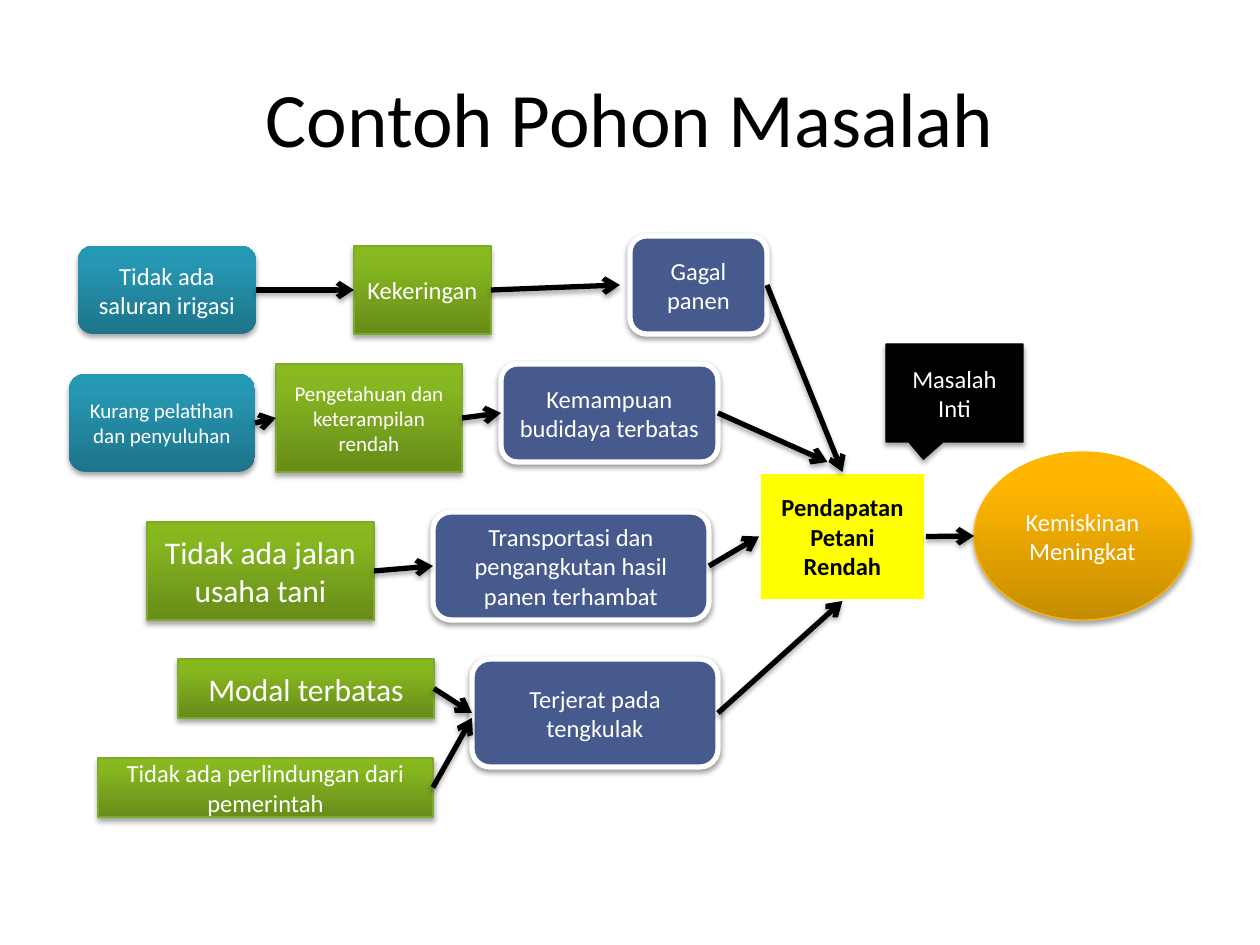
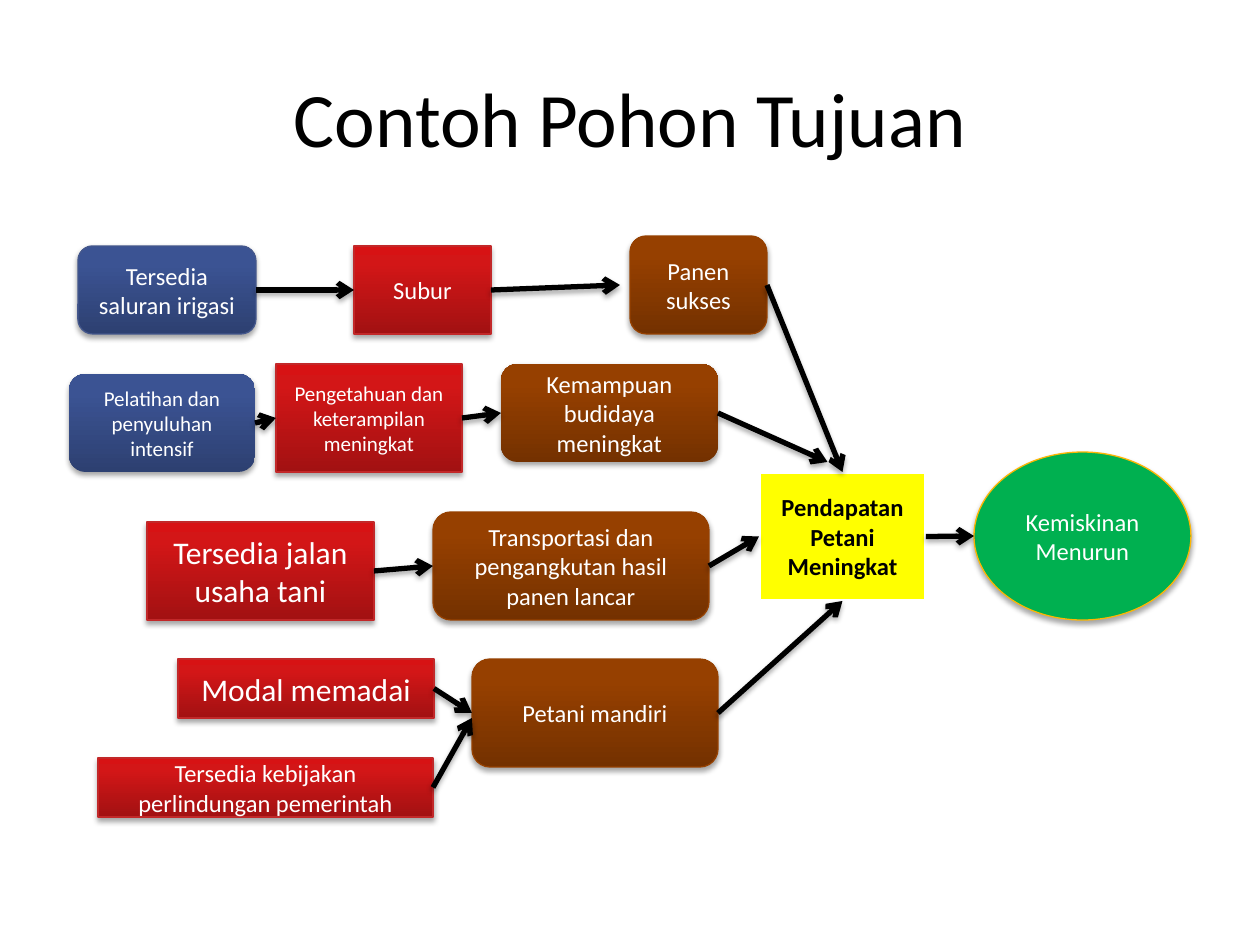
"""Build the problem tree and the objective tree as two slides."""
from copy import deepcopy

from lxml.etree import SubElement
from pptx import Presentation
from pptx.dml.color import RGBColor as Rgb
from pptx.enum.shapes import MSO_CONNECTOR as Line, MSO_SHAPE as Shape
from pptx.enum.text import MSO_ANCHOR as Anchor, PP_ALIGN as Align
from pptx.oxml.ns import qn
from pptx.util import Pt

SCALE = 914400 / 126
SLIDE_SIZE = (1260, 945)
TITLE_AREA = (63, 38, 1134, 157)

THEME = {
    "font": "Calibri", "ink": "000000", "paper": "FFFFFF",
    "title": 44, "large": 18, "body": 14, "small": 12,
    "arrow": 3, "soft": (35, 3.1, 1.8), "raised": (38, 3.1, 1.6),
    "teal": ("1D7489", "2696B2", "2499B5"),
    "green": ("678C19", "86B620", "88BA1D"),
    "amber": ("C58C00", "FFB601", "FFB602"),
    "blue": ("2D4071", "3B5393", "395295"),
    "red": ("A21112", "D31617", "D71214"),
    "brown": ("743100", "964000", "974100"),
    "slate": ("475A8D",), "yellow": ("FFFF00",),
    "emerald": ("00B050",), "black": ("000000",),
}

# role, area, text size
NODES = {
    "poverty": ("outcome", (974, 452, 217, 168), "body"),
    "income": ("core", (759, 472, 167, 129), "body"),
    "harvest": ("effect", (630, 236, 137, 98), "body"),
    "skill": ("effect", (501, 364, 217, 98), "body"),
    "transport": ("effect", (433, 512, 276, 108), "body"),
    "finance": ("effect", (472, 659, 246, 108), "body"),
    "water": ("cause", (354, 246, 137, 88), "body"),
    "irrigation": ("root", (78, 246, 178, 88), "body"),
    "knowledge": ("cause", (276, 364, 186, 108), "small"),
    "training": ("root", (69, 374, 186, 98), "small"),
    "road": ("cause", (147, 522, 227, 98), "large"),
    "capital": ("cause", (178, 659, 256, 59), "large"),
    "protection": ("cause", (98, 758, 335, 59), "body"),
    "label": ("label", (886, 344, 137, 98), "body"),
}

ROLE_SHAPES = {
    "outcome": Shape.OVAL, "core": Shape.RECTANGLE, "cause": Shape.RECTANGLE,
    "effect": Shape.ROUNDED_RECTANGLE, "root": Shape.ROUNDED_RECTANGLE,
    "label": Shape.RECTANGULAR_CALLOUT,
}
LABEL_POINTER = (-0.227, 0.676)

# source, target, side entered, shift of the arrow tip
LINKS = [
    ("income", "poverty", "left", (0, 0)),
    ("harvest", "income", "top", (0, 0)),
    ("skill", "income", "top", (-15, -10)),
    ("transport", "income", "left", (0, 0)),
    ("finance", "income", "bottom", (0, 0)),
    ("water", "harvest", "left", (-10, 0)),
    ("irrigation", "water", "left", (0, 0)),
    ("training", "knowledge", "left", (0, 0)),
    ("knowledge", "skill", "left", (0, 0)),
    ("road", "transport", "left", (0, 0)),
    ("capital", "finance", "left", (0, 0)),
    ("protection", "finance", "left", (0, 5)),
]

# styles: fill, line colour, line width, shadow
COMMON_STYLES = {
    "core": ("yellow", "FFFFFF", 2, None),
    "label": ("black", "000000", 0.75, "soft"),
}
TREES = [
    {
        "title": "Contoh Pohon Masalah",
        "styles": {
            "outcome": ("amber", "FEB604", 0.75, "soft"),
            "effect": ("slate", "FFFFFF", 3, "raised"),
            "cause": ("green", "82A92F", 0.75, "soft"),
            "root": ("teal", None, 0, "soft"),
        },
        "unlined": (),
        "texts": {
            "poverty": "Kemiskinan Meningkat",
            "income": "Pendapatan Petani Rendah",
            "harvest": "Gagal panen",
            "skill": "Kemampuan budidaya terbatas",
            "transport": "Transportasi dan pengangkutan hasil panen terhambat",
            "finance": "Terjerat pada tengkulak",
            "water": "Kekeringan",
            "irrigation": "Tidak ada saluran irigasi",
            "knowledge": "Pengetahuan dan keterampilan rendah",
            "training": "Kurang pelatihan dan penyuluhan",
            "road": "Tidak ada jalan usaha tani",
            "capital": "Modal terbatas",
            "protection": "Tidak ada perlindungan dari pemerintah",
            "label": "Masalah Inti",
        },
    },
    {
        "title": "Contoh Pohon Tujuan",
        "styles": {
            "outcome": ("emerald", "FEB604", 0.75, "soft"),
            "effect": ("brown", "964101", 0.75, "soft"),
            "cause": ("red", "C22829", 0.75, "soft"),
            "root": ("blue", "44578C", 0.75, "soft"),
        },
        "unlined": ("skill", "training"),
        "texts": {
            "poverty": "Kemiskinan Menurun",
            "income": "Pendapatan Petani Meningkat",
            "harvest": "Panen sukses",
            "skill": "Kemampuan budidaya meningkat",
            "transport": "Transportasi dan pengangkutan hasil panen lancar",
            "finance": "Petani mandiri",
            "water": "Subur",
            "irrigation": "Tersedia saluran irigasi",
            "knowledge": "Pengetahuan dan keterampilan meningkat",
            "training": "Pelatihan dan penyuluhan intensif",
            "road": "Tersedia jalan usaha tani",
            "capital": "Modal memadai",
            "protection": "Tersedia kebijakan perlindungan pemerintah",
        },
    },
]


def emu(*lengths):
    """Turn px lengths into EMU."""
    return [round(length * SCALE) for length in lengths]


def write(holder, text, size="body", color="paper", bold=False):
    """Put centred text in a shape or text box."""
    frame = holder.text_frame
    frame.word_wrap = True
    frame.vertical_anchor = Anchor.MIDDLE
    paragraph = frame.paragraphs[0]
    paragraph.alignment = Align.CENTER
    run = paragraph.add_run()
    run.text = text
    run.font.name = THEME["font"]
    run.font.size = Pt(THEME[size])
    run.font.bold = bold
    run.font.color.rgb = Rgb.from_string(THEME[color])


def paint(node, colors):
    """Fill with one colour, or with a gradient rising from the bottom."""
    if len(colors) == 1:
        node.fill.solid()
        node.fill.fore_color.rgb = Rgb.from_string(colors[0])
        return
    node.fill.gradient()
    node.fill.gradient_angle = 90
    stop_list = node.element.spPr.find(".//" + qn("a:gsLst"))
    stop_list.append(deepcopy(stop_list[0]))
    for stop, color, position in zip(node.fill.gradient_stops, colors, (0, 0.8, 1)):
        stop.color.rgb = Rgb.from_string(color)
        stop.position = position


def outline(part, color, width):
    """Set the line colour and width, or remove the line."""
    if color is None:
        part.line.fill.background()
        return
    part.line.color.rgb = Rgb.from_string(color)
    part.line.width = Pt(width)


def cast_shadow(part, kind):
    """Replace the inherited effects with a downward shadow or none."""
    effects = SubElement(part.element.spPr, qn("a:effectLst"))
    if kind:
        opacity, blur, distance = THEME[kind]
        shadow = SubElement(effects, qn("a:outerShdw"), blurRad=str(Pt(blur)),
                            dist=str(Pt(distance)), dir="5400000", rotWithShape="0")
        color = SubElement(shadow, qn("a:srgbClr"), val=THEME["ink"])
        SubElement(color, qn("a:alpha"), val=str(opacity * 1000))


def add_node(slide, name, tree):
    """Draw one box of the tree."""
    role, area, size = NODES[name]
    fill, line, width, shadow = {**COMMON_STYLES, **tree["styles"]}[role]
    node = slide.shapes.add_shape(ROLE_SHAPES[role], *emu(*area))
    if role == "label":
        node.adjustments[0], node.adjustments[1] = LABEL_POINTER
    paint(node, THEME[fill])
    outline(node, None if name in tree["unlined"] else line, width)
    cast_shadow(node, shadow)
    is_core = role == "core"
    write(node, tree["texts"][name], size=size,
          color="ink" if is_core else "paper", bold=is_core)
    return node


def edge(name, side):
    """Give the middle of one side of a box."""
    left, top, width, height = NODES[name][1]
    across, down = {"top": (0.5, 0), "left": (0, 0.5),
                    "bottom": (0.5, 1), "right": (1, 0.5)}[side]
    return left + width * across, top + height * down


def add_link(slide, nodes, source, target, side, shift):
    """Draw an arrow from the right of one box to a side of another."""
    tip = [place + move for place, move in zip(edge(target, side), shift)]
    ends = emu(*edge(source, "right"), *tip)
    link = slide.shapes.add_connector(Line.STRAIGHT, *ends)
    link.begin_connect(nodes[source], 3)
    if not any(shift):
        sites = ("top", "corner", "left") if target == "poverty" else ("top", "left", "bottom")
        link.end_connect(nodes[target], sites.index(side))
    link.end_x, link.end_y = ends[2:]
    outline(link, THEME["ink"], THEME["arrow"])
    SubElement(link.element.spPr.find(qn("a:ln")), qn("a:tailEnd"), type="arrow")
    cast_shadow(link, "soft")


def add_tree(deck, tree):
    """Add one slide with its title, boxes and arrows."""
    slide = deck.slides.add_slide(deck.slide_layouts[6])
    write(slide.shapes.add_textbox(*emu(*TITLE_AREA)), tree["title"],
          size="title", color="ink")
    nodes = {name: add_node(slide, name, tree) for name in NODES if name != "label"}
    for link in LINKS:
        add_link(slide, nodes, *link)
    if "label" in tree["texts"]:
        add_node(slide, "label", tree)


def main():
    """Build and save the deck."""
    deck = Presentation()
    deck.slide_width, deck.slide_height = emu(*SLIDE_SIZE)
    for tree in TREES:
        add_tree(deck, tree)
    deck.save("out.pptx")


if __name__ == "__main__":
    main()
